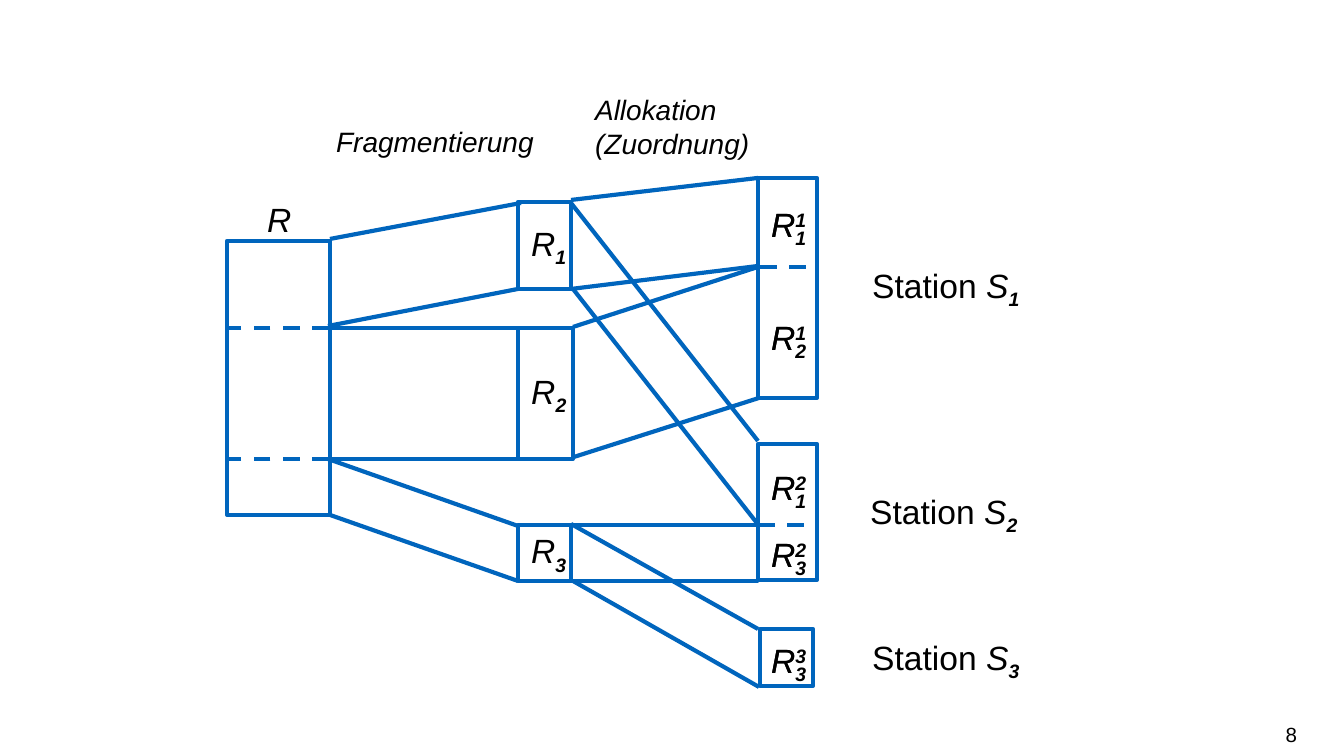
"""Builds the slide on fragmentation and allocation of a relation R to three stations."""
from pptx import Presentation, util as u
from pptx.dml.color import RGBColor
from pptx.enum import dml, shapes, text
from pptx.oxml.ns import qn
from lxml import etree

PX = u.Inches(10) / 1344
BLUE = RGBColor(0x00, 0x65, 0xBD)
WHITE = RGBColor(0xFF, 0xFF, 0xFF)
BLACK = RGBColor(0x00, 0x00, 0x00)
SUB, SUPER = -25000, 30000
LABEL_HEIGHT = 54

PLAIN_BOXES = [
    (227, 241, 103, 274),
    (330, 328, 188, 131),
    (571, 525, 187, 56),
    (758, 178, 59, 220),
    (758, 444, 59, 136),
    (760, 629, 53, 57),
]
FRAGMENTS = [
    ("1", (518, 202, 53, 87)),
    ("2", (518, 328, 55, 131)),
    ("3", (518, 525, 53, 56)),
]
CUTS = [
    (329, 328, 227, 328),
    (329, 459, 227, 459),
    (760, 267, 815, 267),
    (758, 525, 815, 525),
]
FRAGMENTATION = [
    (330, 239, 521, 203),
    (328, 326, 518, 289),
    (328, 459, 518, 526),
    (330, 515, 518, 581),
]
ALLOCATION = [
    (571, 200, 758, 178),
    (571, 289, 758, 266),
    (573, 327, 758, 267),
    (574, 457, 759, 398),
    (573, 289, 760, 527),
    (571, 203, 758, 441),
    (571, 524, 758, 629),
    (573, 581, 759, 687),
]
REPLICAS = [("1", "1", 197), ("2", "1", 310), ("1", "2", 460), ("3", "2", 527), ("3", "3", 633)]
STATIONS = [("1", 859, 258), ("2", 857, 484), ("3", 859, 630)]
HEADINGS = [
    (["R"], 18, (254, 192, 51, LABEL_HEIGHT)),
    (["Fragmentierung"], 15, (323, 118, 227, 47)),
    (["Allokation", "(Zuordnung)"], 15, (582, 86, 183, 82)),
]
PAGE = ("8", (996, 714, 301, 40))


def emu(lengths):
    return [round(length * PX) for length in lengths]


def add_run(paragraph, words, size=18, italic=True, bold=False, baseline=0):
    run = paragraph.add_run()
    run.text = words
    font = run.font
    font.name, font.size, font.italic, font.bold = "Arial", u.Pt(size), italic, bold
    font.color.rgb = BLACK
    if baseline:
        run._r.get_or_add_rPr().set("baseline", str(baseline))


def add_indexed(paragraph, letter, index, baseline):
    add_run(paragraph, letter)
    add_run(paragraph, index, bold=True, baseline=baseline)


def add_box(slide, place):
    box = slide.shapes.add_shape(shapes.MSO_SHAPE.RECTANGLE, *emu(place))
    box.shadow.inherit = False
    box.fill.solid()
    box.fill.fore_color.rgb = WHITE
    box.line.color.rgb = BLUE
    box.line.width = u.Pt(2.25)
    return box


def add_line(slide, ends, dashed=False):
    line = slide.shapes.add_connector(shapes.MSO_CONNECTOR.STRAIGHT, *emu(ends))
    line.line.color.rgb = BLUE
    line.line.width = u.Pt(2.25)
    if dashed:
        line.line.dash_style = dml.MSO_LINE.DASH
    etree.SubElement(line._element.spPr, qn("a:effectLst"))


def add_label(slide, place):
    frame = slide.shapes.add_textbox(*emu(place)).text_frame
    frame.word_wrap = False
    frame.auto_size = text.MSO_AUTO_SIZE.SHAPE_TO_FIT_TEXT
    return frame


def main():
    prs = Presentation()
    prs.slide_width, prs.slide_height = emu((1344, 756))
    slide = prs.slides.add_slide(prs.slide_layouts[6])

    for place in PLAIN_BOXES:
        add_box(slide, place)
    for index, place in FRAGMENTS:
        frame = add_box(slide, place).text_frame
        frame.word_wrap = False
        frame.vertical_anchor = text.MSO_ANCHOR.MIDDLE
        frame.paragraphs[0].alignment = text.PP_ALIGN.LEFT
        add_indexed(frame.paragraphs[0], "R", index, SUB)

    for ends in CUTS:
        add_line(slide, ends, dashed=True)
    for ends in FRAGMENTATION + ALLOCATION:
        add_line(slide, ends)

    for fragment, station, top in REPLICAS:
        for index, baseline in ((fragment, SUB), (station, SUPER)):
            frame = add_label(slide, (758, top, 64, LABEL_HEIGHT))
            add_indexed(frame.paragraphs[0], "R", index, baseline)
    for index, left, top in STATIONS:
        paragraph = add_label(slide, (left, top, 177, LABEL_HEIGHT)).paragraphs[0]
        add_run(paragraph, "Station ", italic=False)
        add_indexed(paragraph, "S", index, SUB)
    for lines, size, place in HEADINGS:
        frame = add_label(slide, place)
        for number, words in enumerate(lines):
            paragraph = frame.add_paragraph() if number else frame.paragraphs[0]
            add_run(paragraph, words, size)

    page_number, place = PAGE
    frame = slide.shapes.add_textbox(*emu(place)).text_frame
    frame.word_wrap = True
    frame.margin_left = frame.margin_right = 0
    frame.vertical_anchor = text.MSO_ANCHOR.MIDDLE
    frame.paragraphs[0].alignment = text.PP_ALIGN.RIGHT
    add_run(frame.paragraphs[0], page_number, 11, italic=False)

    prs.save("out.pptx")


if __name__ == "__main__":
    main()
